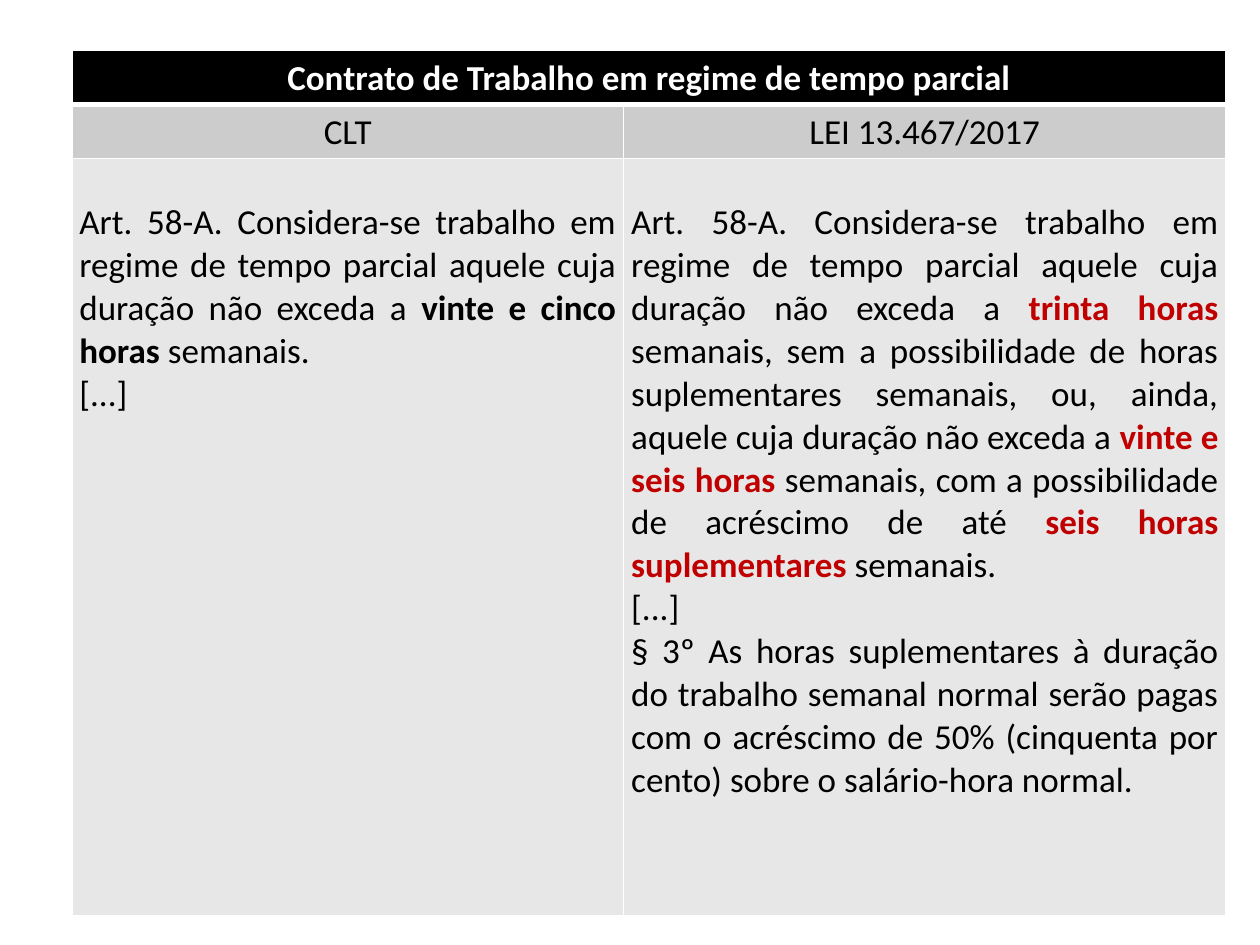
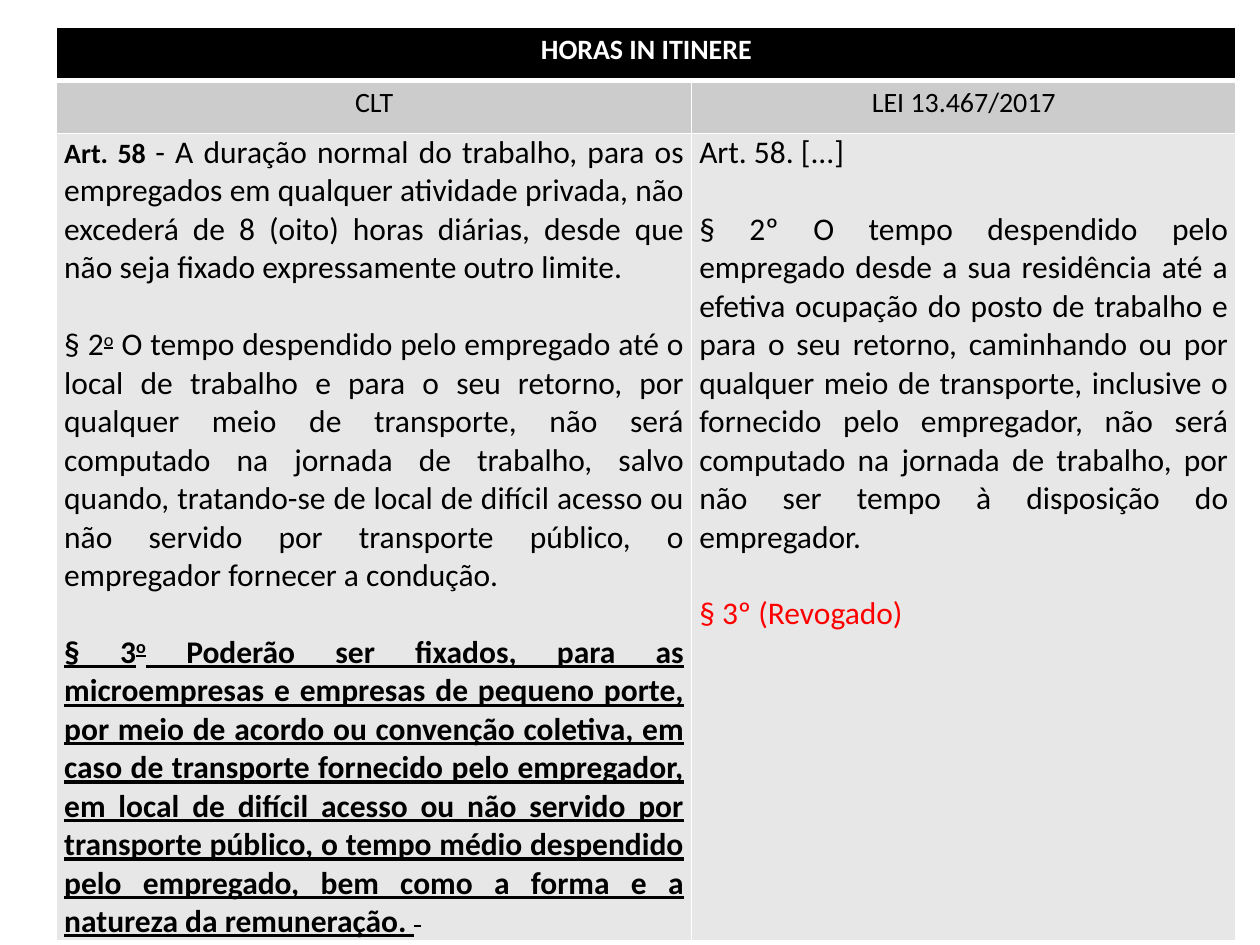
import pptx
import pptx.util
import pptx.dml.color
import pptx.enum.text
from lxml import etree

Inches, Pt = pptx.util.Inches, pptx.util.Pt
ALIGN = pptx.enum.text.PP_ALIGN
COLORS = {"title": "000000", "heading": "CCCCCC", "body": "E7E7E7", "border": "FFFFFF",
          "title_text": "FFFFFF", "text": "000000", "change": "C00000", "revoked": "FF0000"}
HEADINGS = ["CLT", "LEI 13.467/2017"]

BOLD = {"bold": True}
CHANGE = {"bold": True, "color": "change"}
ORDINAL = {"underline": True, "raised": True}
UNDERLINED = {"bold": True, "underline": True}


class Deck:
    """Holds the table style and the current slide."""

    def __init__(self):
        self.prs = pptx.Presentation()
        self.prs.slide_width, self.prs.slide_height = Inches(10), Inches(7.5)
        self.slide = None

    def add_slide(self):
        self.slide = self.prs.slides.add_slide(self.prs.slide_layouts[6])

    def border(self, cell, side, width):
        tc_pr = cell._tc.get_or_add_tcPr()
        ns = "{%s}" % tc_pr.nsmap["a"]
        ln = etree.SubElement(tc_pr, ns + "ln" + side, w=str(Pt(width)))
        fill = etree.SubElement(ln, ns + "solidFill")
        etree.SubElement(fill, ns + "srgbClr", val=COLORS["border"])

    def cell(self, cell, fill, top=1, bottom=1, margin_top=0):
        for side, width in (("L", 1), ("R", 1), ("T", top), ("B", bottom)):
            self.border(cell, side, width)
        cell.fill.solid()
        cell.fill.fore_color.rgb = pptx.dml.color.RGBColor.from_string(COLORS[fill])
        cell.margin_left = cell.margin_right = Inches(0.06)
        cell.margin_top, cell.margin_bottom = Inches(margin_top), 0

    def run(self, p, text, size, color="text", bold=False, underline=False,
            raised=False, strike=False):
        r = p.add_run()
        r.text = text
        r.font.name, r.font.size = "Calibri", Pt(size)
        r.font.bold, r.font.underline = bold, underline
        r.font.color.rgb = pptx.dml.color.RGBColor.from_string(COLORS[color])
        if raised:
            r.font._element.set("baseline", "30000")
        if strike:
            r.font._element.set("strike", "sngStrike")

    def heading(self, cell, text, size, **style):
        p = cell.text_frame.paragraphs[0]
        p.alignment, p.line_spacing = ALIGN.CENTER, 1.15
        self.run(p, text, size, **style)

    def article(self, cell, paragraphs, size, gap):
        """Fill a cell with justified paragraphs, each a list of (text, style) runs."""
        tf = cell.text_frame
        for i, runs in enumerate(paragraphs):
            p = tf.add_paragraph() if i else tf.paragraphs[0]
            p.alignment = ALIGN.JUSTIFY
            if i and gap:
                p.space_before = Pt(gap)
            for text, style in runs:
                self.run(p, text, **{"size": size, **style})

    def comparison(self, title, articles, left, top, widths, heights,
                   heading_size, body_size, gap=0, body_top=0):
        """Two-column table setting the old law beside the new one."""
        table = self.slide.shapes.add_table(
            3, 2, Inches(left), Inches(top), Inches(sum(widths)), Inches(sum(heights))).table
        table.first_row = table.horz_banding = False
        for column, width in zip(table.columns, widths):
            column.width = Inches(width)
        for row, height in zip(table.rows, heights):
            row.height = Inches(height)
        for c in range(2):
            self.cell(table.cell(0, c), "title", bottom=3)
            self.cell(table.cell(1, c), "heading", top=3)
            self.cell(table.cell(2, c), "body", margin_top=body_top)
            self.heading(table.cell(1, c), HEADINGS[c], heading_size)
            self.article(table.cell(2, c), articles[c], body_size, gap)
        table.cell(0, 0).merge(table.cell(0, 1))
        self.heading(table.cell(0, 0), title, heading_size, color="title_text", bold=True)


def main():
    deck = Deck()

    deck.add_slide()
    part_time_old = [
        [("Art. 58-A. Considera-se trabalho em regime de tempo parcial aquele cuja duração "
          "não exceda a ", {}),
         ("vinte e cinco horas ", BOLD), ("semanais.", {})],
        [("[...]", {})],
    ]
    part_time_new = [
        [("Art. 58-A. Considera-se trabalho em regime de tempo parcial aquele cuja duração "
          "não exceda a ", {}),
         ("trinta horas ", CHANGE),
         ("semanais, sem a possibilidade de horas suplementares semanais, ou, ainda, aquele "
          "cuja duração não exceda a ", {}),
         ("vinte e seis horas ", CHANGE),
         ("semanais, com a possibilidade de acréscimo de até ", {}),
         ("seis horas suplementares ", CHANGE), ("semanais.", {})],
        [("[...]", {})],
        [("§ 3º As horas suplementares à duração do trabalho semanal normal serão pagas com o "
          "acréscimo de 50% (cinquenta por cento) sobre o salário-hora normal.", {})],
    ]
    deck.comparison("Contrato de Trabalho em regime de tempo parcial",
                    [part_time_old, part_time_new], 0.57, 0.4, [4.38, 4.78],
                    [0.43, 0.43, 6.01], heading_size=20, body_size=20, body_top=0.34)

    deck.add_slide()
    commute_old = [
        [("Art. 58 ", {"bold": True, "size": 16}),
         ("- A duração normal do trabalho, para os empregados em qualquer atividade privada, "
          "não excederá de 8 (oito) horas diárias, desde que não seja fixado expressamente "
          "outro limite.", {})],
        [("§ 2", {}), ("o", ORDINAL),
         (" O tempo despendido pelo empregado até o local de trabalho e para o seu retorno, "
          "por qualquer meio de transporte, não será computado na jornada de trabalho, salvo "
          "quando, tratando-se de local de difícil acesso ou não servido por transporte "
          "público, o empregador fornecer a condução.", {})],
        [("§ 3", UNDERLINED), ("o", {**UNDERLINED, **ORDINAL}),
         (" Poderão ser fixados, para as microempresas e empresas de pequeno porte, por meio "
          "de acordo ou convenção coletiva, em caso de transporte fornecido pelo empregador, "
          "em local de difícil acesso ou não servido por transporte público, o tempo médio "
          "despendido pelo empregado, bem como a forma e a natureza da remuneração. ",
          UNDERLINED),
         (" ", {"strike": True})],
    ]
    commute_new = [
        [("Art. 58. [...]", {})],
        [("§ 2º O tempo despendido pelo empregado desde a sua residência até a efetiva "
          "ocupação do posto de trabalho e para o seu retorno, caminhando ou por qualquer "
          "meio de transporte, inclusive o fornecido pelo empregador, não será computado na "
          "jornada de trabalho, por não ser tempo à disposição do empregador.", {})],
        [("§ 3º (Revogado)", {"color": "revoked"})],
    ]
    deck.comparison("HORAS IN ITINERE", [commute_old, commute_new], 0.45, 0.22,
                    [5.04, 4.32], [0.42, 0.42, 6.4], heading_size=16, body_size=18, gap=22)

    deck.prs.save("out.pptx")


if __name__ == "__main__":
    main()
